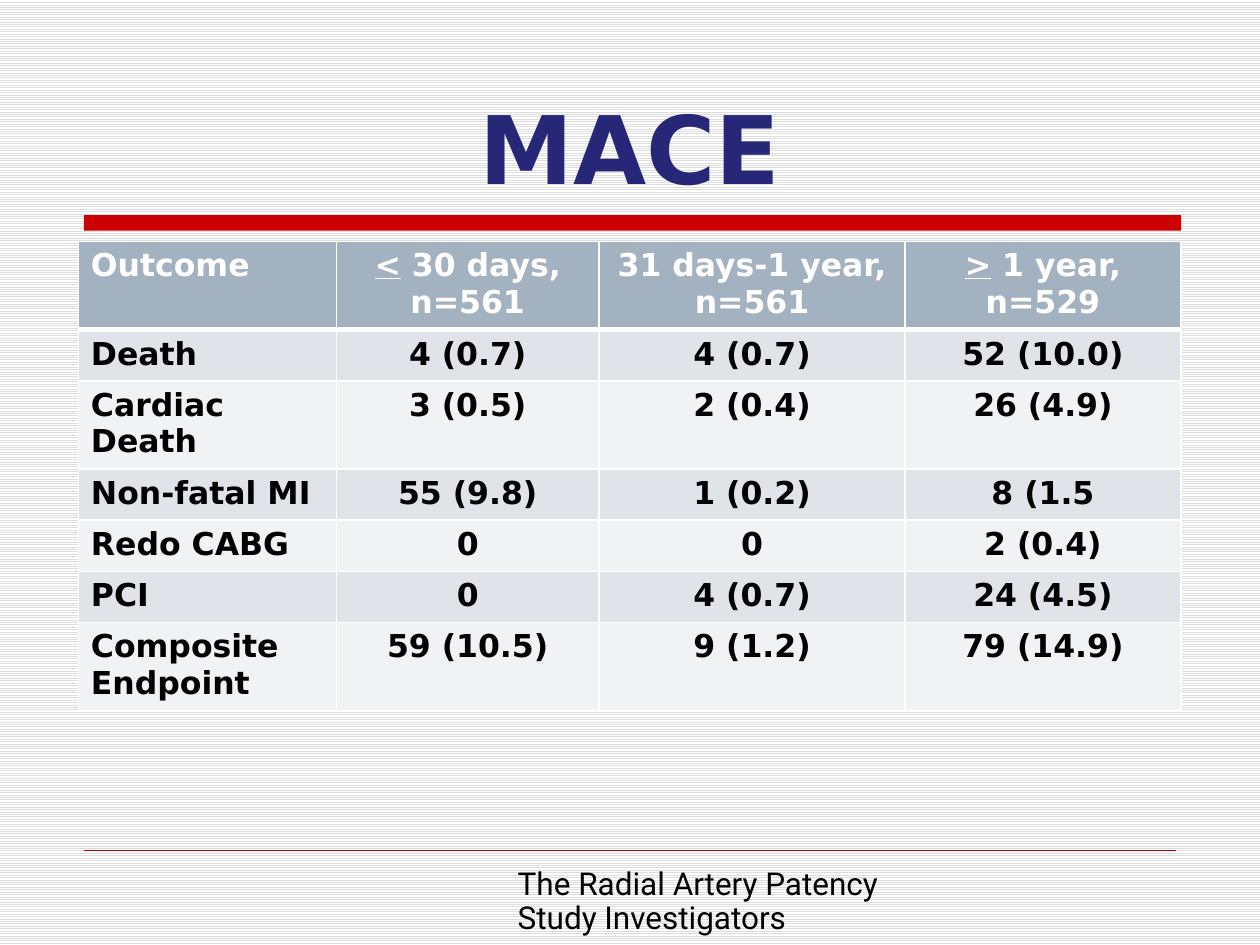
from lxml import etree
from pptx import Presentation
from pptx import util as u
from pptx.dml.color import RGBColor
from pptx.enum import dml, shapes, text
from pptx.oxml import ns

Pt = u.Pt
HEADING = "MACE"
FOOTER = "The Radial Artery Patency Study Investigators"
OUTCOMES = [
    ("Outcome", ("<", " 30 days, n=561"), "31 days-1 year, n=561", (">", " 1 year, n=529")),
    ("Death", "4 (0.7)", "4 (0.7)", "52 (10.0)"),
    ("Cardiac Death", "3 (0.5)", "2 (0.4)", "26 (4.9)"),
    ("Non-fatal MI", "55 (9.8)", "1 (0.2)", "8 (1.5"),
    ("Redo CABG", "0", "0", "2 (0.4)"),
    ("PCI", "0", "4 (0.7)", "24 (4.5)"),
    ("Composite Endpoint", "59 (10.5)", "9 (1.2)", "79 (14.9)"),
]
COLUMN_WIDTHS = (147.5, 150, 175, 157.5)
ROW_HEIGHT = 29.2
THEME = {
    "font": "DejaVu Sans", "footer_font": "Roboto",
    "title_size": 54, "body_size": 18,
    "title": "272777", "ink": "000000", "white": "FFFFFF", "red": "CC0000",
    "stripe": "DDDDDD", "header": "A3B2C1", "bands": ("E0E4E9", "F0F2F4"),
}


def rgb(value):
    return RGBColor.from_string(value)


def write(frame, content, size=THEME["body_size"], font=THEME["font"], color=THEME["ink"],
          bold=True, align=text.PP_ALIGN.LEFT, spacing=None):
    frame.word_wrap = True
    paragraph = frame.paragraphs[0]
    paragraph.alignment = align
    if spacing:
        paragraph.line_spacing = spacing
    parts = content if isinstance(content, tuple) else (content,)
    for part in parts:
        run = paragraph.add_run()
        run.text = part
        run.font.size = Pt(size)
        run.font.name = font
        run.font.bold = bold
        run.font.color.rgb = rgb(color)
        if part in ("<", ">"):
            run.font.underline = True


def add_text(slide, box, content, anchor=text.MSO_ANCHOR.TOP, **style):
    frame = slide.shapes.add_textbox(*map(Pt, box)).text_frame
    frame.vertical_anchor = anchor
    write(frame, content, **style)


def add_borders(cell, bottom):
    properties = cell._tc.get_or_add_tcPr()
    for side, width in (("lnL", 1), ("lnR", 1), ("lnT", 1), ("lnB", bottom)):
        border = etree.SubElement(properties, ns.qn(f"a:{side}"), w=str(Pt(width)))
        fill = etree.SubElement(border, ns.qn("a:solidFill"))
        etree.SubElement(fill, ns.qn("a:srgbClr"), val=THEME["white"])


def add_rules(slide):
    bar = slide.shapes.add_shape(shapes.MSO_SHAPE.RECTANGLE, Pt(48), Pt(123), Pt(627), Pt(8.8))
    bar.shadow.inherit = False
    bar.fill.solid()
    bar.fill.fore_color.rgb = rgb(THEME["red"])
    bar.line.fill.background()
    rule = slide.shapes.add_connector(
        shapes.MSO_CONNECTOR.STRAIGHT, Pt(48), Pt(486), Pt(672), Pt(486))
    rule.line.color.rgb = rgb(THEME["red"])
    rule.line.width = Pt(0.25)
    etree.SubElement(rule._element.spPr, ns.qn("a:effectLst"))


def add_outcomes(slide):
    table = slide.shapes.add_table(
        len(OUTCOMES), len(COLUMN_WIDTHS), Pt(44.8), Pt(138),
        Pt(sum(COLUMN_WIDTHS)), Pt(ROW_HEIGHT * len(OUTCOMES))).table
    table.horz_banding = False
    for column, width in zip(table.columns, COLUMN_WIDTHS):
        column.width = Pt(width)
    for r, outcome in enumerate(OUTCOMES):
        table.rows[r].height = Pt(ROW_HEIGHT)
        header = r == 0
        band = THEME["header"] if header else THEME["bands"][(r - 1) % 2]
        for c, content in enumerate(outcome):
            cell = table.cell(r, c)
            add_borders(cell, bottom=3 if header else 1)
            cell.fill.solid()
            cell.fill.fore_color.rgb = rgb(band)
            write(cell.text_frame, content,
                  color=THEME["white"] if header else THEME["ink"],
                  align=text.PP_ALIGN.CENTER if c else text.PP_ALIGN.LEFT)


def main():
    deck = Presentation()
    deck.slide_width, deck.slide_height = Pt(720), Pt(540)
    slide = deck.slides.add_slide(deck.slide_layouts[6])
    backdrop = slide.background.fill
    backdrop.patterned()
    backdrop.pattern = dml.MSO_PATTERN.LIGHT_HORIZONTAL
    backdrop.fore_color.rgb = rgb(THEME["stripe"])
    backdrop.back_color.rgb = rgb(THEME["white"])
    add_rules(slide)
    add_text(slide, (288.8, 492.5, 269, 46.5), FOOTER,
             font=THEME["footer_font"], bold=False, spacing=0.9)
    add_text(slide, (45, 24, 630, 95.5), HEADING, anchor=text.MSO_ANCHOR.BOTTOM,
             size=THEME["title_size"], color=THEME["title"], align=text.PP_ALIGN.CENTER)
    add_outcomes(slide)
    deck.save("out.pptx")


if __name__ == "__main__":
    main()
